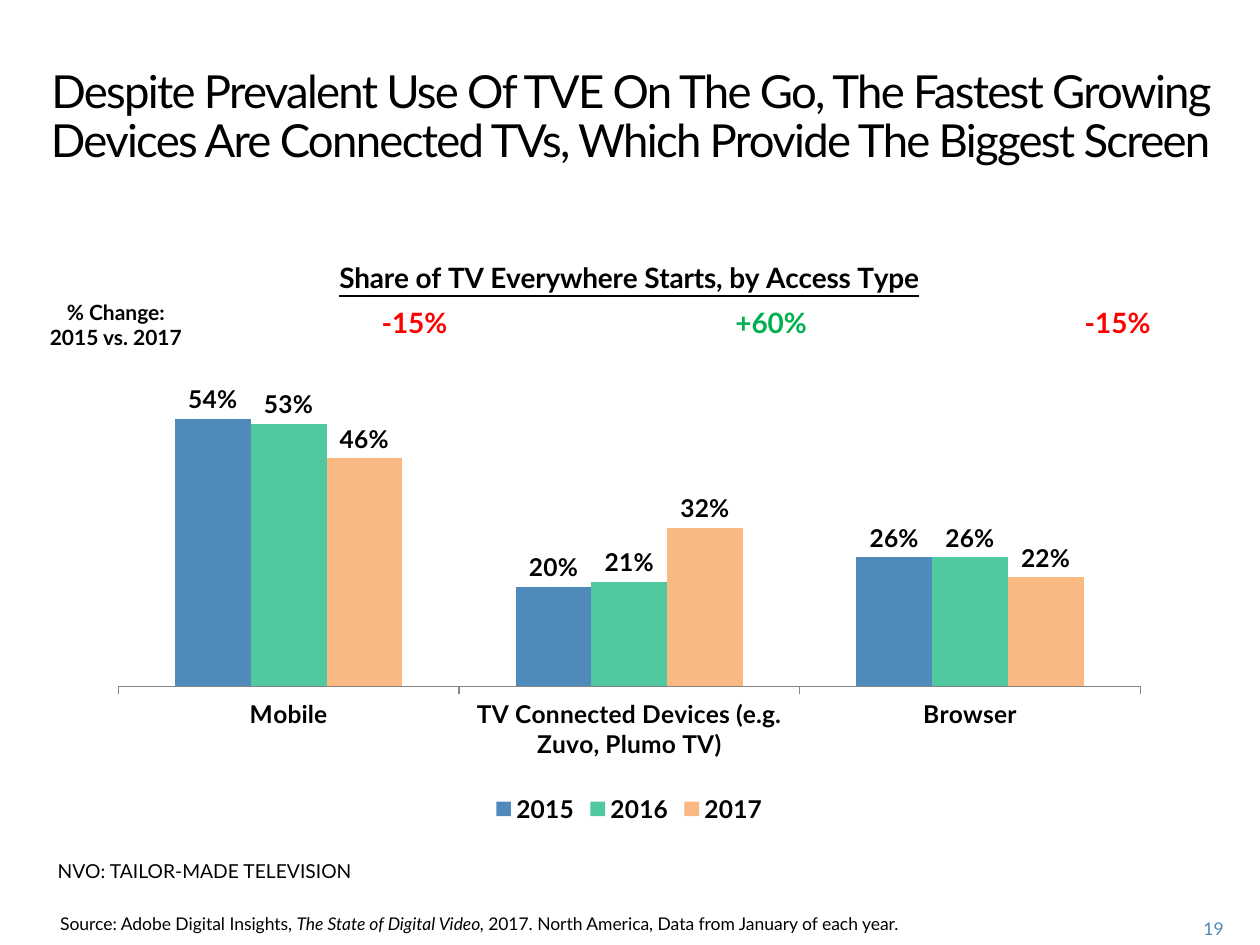
from lxml.etree import SubElement
from pptx import Presentation
from pptx.chart.data import CategoryChartData
from pptx.dml.color import RGBColor
from pptx.enum.chart import XL_CHART_TYPE, XL_LABEL_POSITION, XL_LEGEND_POSITION, XL_TICK_MARK
from pptx.enum.text import MSO_ANCHOR, MSO_AUTO_SIZE, PP_ALIGN
from pptx.oxml.ns import qn
from pptx.util import Inches, Pt

BLACK = RGBColor(0x00, 0x00, 0x00)
GRAY = RGBColor(0x86, 0x86, 0x86)
RED = RGBColor(0xFF, 0x00, 0x00)
GREEN = RGBColor(0x00, 0xB0, 0x50)
BLUE = RGBColor(0x50, 0x8A, 0xBA)
MINT = RGBColor(0x50, 0xC8, 0xA0)
PEACH = RGBColor(0xFA, 0xB9, 0x82)

CATEGORIES = ["Mobile", "TV Connected Devices (e.g. Zuvo, Plumo TV)", "Browser"]
SERIES = [
    ("2015", (0.54, 0.20, 0.26), BLUE),
    ("2016", (0.53, 0.21, 0.26), MINT),
    ("2017", (0.46, 0.32, 0.22), PEACH),
]
CHANGES = [(2.75, "-15%", RED), (5.58, "+60%", GREEN), (8.33, "-15%", RED)]


class SlideBuilder:
    font_name = "Lato"

    def __init__(self, slide):
        self.slide = slide

    def style(self, font, size, color=BLACK, bold=False):
        font.name = self.font_name
        font.size = Pt(size)
        font.color.rgb = color
        font.bold = bold

    def title(self, text, left, top, width, height):
        shape = self.slide.shapes.title
        shape.left, shape.top = Inches(left), Inches(top)
        shape.width, shape.height = Inches(width), Inches(height)
        frame = shape.text_frame
        frame.text = text
        frame.auto_size = MSO_AUTO_SIZE.NONE
        frame.vertical_anchor = MSO_ANCHOR.MIDDLE
        paragraph = frame.paragraphs[0]
        paragraph.alignment = PP_ALIGN.CENTER
        paragraph.line_spacing = Pt(28)
        run = paragraph.runs[0]
        self.style(run.font, 26)
        run.font._element.set("spc", "-100")

    def text(self, parts, left, top, width, height, size, color=BLACK, bold=False,
             align=PP_ALIGN.LEFT, anchor=MSO_ANCHOR.TOP):
        """Add a one-paragraph text box; every second part is italic."""
        box = self.slide.shapes.add_textbox(
            Inches(left), Inches(top), Inches(width), Inches(height))
        frame = box.text_frame
        frame.word_wrap = True
        frame.vertical_anchor = anchor
        paragraph = frame.paragraphs[0]
        paragraph.alignment = align
        for index, part in enumerate(parts):
            run = paragraph.add_run()
            run.text = part
            self.style(run.font, size, color, bold)
            run.font.italic = index % 2 == 1

    def column_chart(self, title, left, top, width, height, plot_area):
        data = CategoryChartData(number_format="0%")
        data.categories = CATEGORIES
        for name, values, _ in SERIES:
            data.add_series(name, values)
        chart = self.slide.shapes.add_chart(
            XL_CHART_TYPE.COLUMN_CLUSTERED, Inches(left), Inches(top),
            Inches(width), Inches(height), data).chart
        self.style(chart.font, 14, bold=True)

        chart.has_title = True
        chart.chart_title.include_in_layout = False
        frame = chart.chart_title.text_frame
        frame.text = title
        title_font = frame.paragraphs[0].runs[0].font
        self.style(title_font, 16, bold=True)
        title_font.underline = True

        chart.has_legend = True
        chart.legend.position = XL_LEGEND_POSITION.BOTTOM
        chart.legend.include_in_layout = False

        value_axis = chart.value_axis
        value_axis.minimum_scale, value_axis.maximum_scale = 0, 0.6
        value_axis.has_major_gridlines = False
        value_axis.visible = False
        category_axis = chart.category_axis
        category_axis.major_tick_mark = XL_TICK_MARK.OUTSIDE
        category_axis.format.line.color.rgb = GRAY

        plot = chart.plots[0]
        plot.gap_width, plot.overlap = 150, 0
        plot.vary_by_categories = False
        for series, (_, _, color) in zip(plot.series, SERIES):
            series.format.fill.solid()
            series.format.fill.fore_color.rgb = color
            labels = series.data_labels
            labels.show_value = True
            labels.number_format = "0%"
            labels.number_format_is_linked = False
            labels.position = XL_LABEL_POSITION.OUTSIDE_END
            self.style(labels.font, 14, bold=True)
        self.place_plot(chart, plot_area)

    def place_plot(self, chart, plot_area):
        """Fix the inner plot area, given as fractions of the chart."""
        area = chart._chartSpace.chart.plotArea
        for old_layout in area.findall(qn("c:layout")):
            area.remove(old_layout)
        layout = SubElement(area, qn("c:layout"))
        area.insert(0, layout)
        manual = SubElement(layout, qn("c:manualLayout"))
        settings = [("layoutTarget", "inner"), ("xMode", "edge"), ("yMode", "edge")]
        settings += zip("xywh", plot_area)
        for tag, value in settings:
            SubElement(manual, qn(f"c:{tag}")).set("val", str(value))


def main():
    presentation = Presentation()
    presentation.slide_width, presentation.slide_height = Inches(10), Inches(7.5)
    builder = SlideBuilder(presentation.slides.add_slide(presentation.slide_layouts[5]))

    builder.title("Despite Prevalent Use Of TVE On The Go, The Fastest Growing "
                  "Devices Are Connected TVs, Which Provide The Biggest Screen",
                  0.17, 0.44, 9.67, 0.98)
    builder.column_chart("Share of TV Everywhere Starts, by Access Type",
                         0.77, 1.86, 8.45, 4.72, (0.02, 0.26, 0.96, 0.5))
    builder.text(["% Change: 2015 vs. 2017"], 0.25, 2.33, 1.34, 0.5, 12,
                 bold=True, align=PP_ALIGN.CENTER)
    for left, change, color in CHANGES:
        builder.text([change], left, 2.38, 1.08, 0.37, 16, color,
                     bold=True, align=PP_ALIGN.CENTER)
    builder.text(["NVO: TAILOR-MADE TELEVISION"], 0.36, 6.77, 3.08, 0.47, 11)
    builder.text(["Source: Adobe Digital Insights, ", "The State of Digital Video, ",
                  "2017. North America, Data from January of each year."],
                 0.38, 7.2, 8.1, 0.26, 10, anchor=MSO_ANCHOR.MIDDLE)
    builder.text(["19"], 9.2, 7.24, 0.61, 0.25, 10, BLUE,
                 align=PP_ALIGN.RIGHT, anchor=MSO_ANCHOR.MIDDLE)
    presentation.save("out.pptx")


if __name__ == "__main__":
    main()
